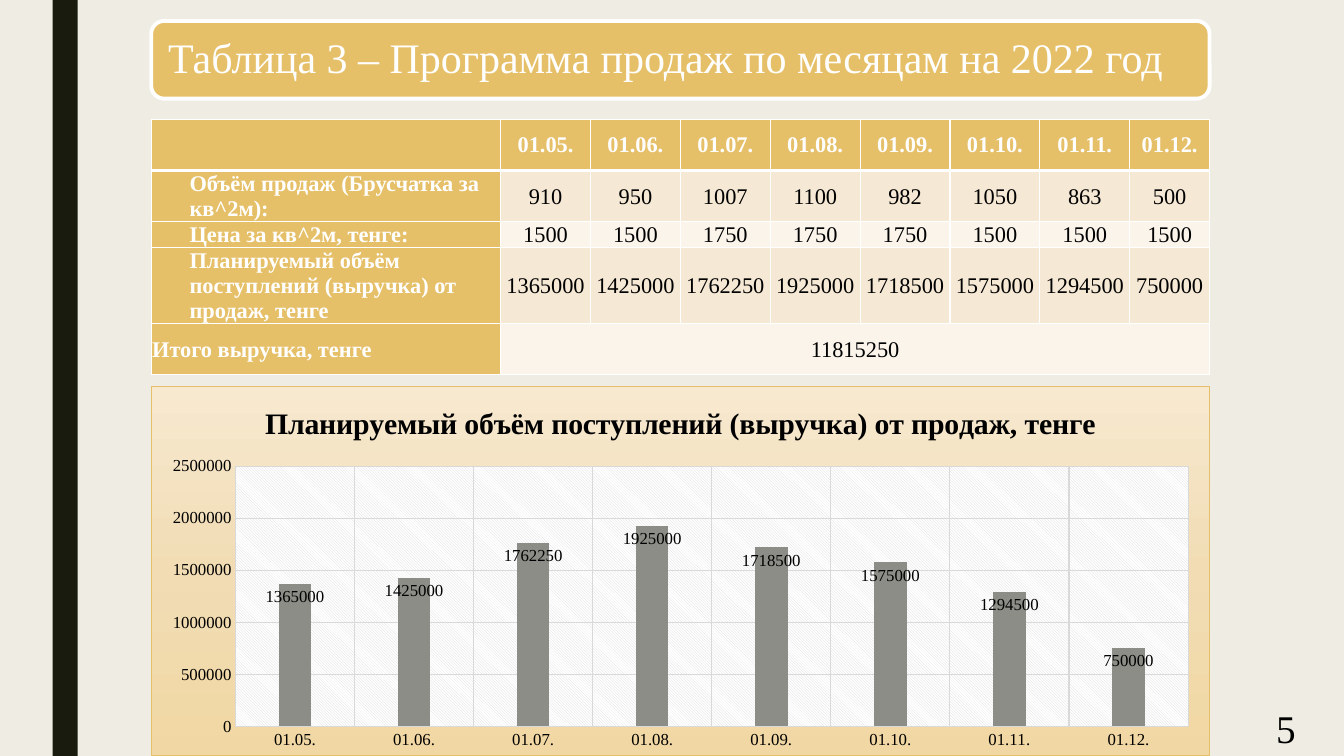
from pptx import Presentation
from pptx import util as u
from pptx.chart import data as chart_data
from pptx.dml import color
from pptx.enum import chart as charts, shapes, text
from pptx.oxml import ns, parse_xml

GOLD, WHITE, BLACK, GRID = "E6C069", "FFFFFF", "000000", "D9D9D9"
BANDS = ["F5E8D4", "FAF4EB"]
REVENUE = "Планируемый объём поступлений (выручка) от продаж, тенге"
MONTHS = [f"01.{month:02}." for month in range(5, 13)]
VOLUMES = [910, 950, 1007, 1100, 982, 1050, 863, 500]
PRICES = [1500, 1500, 1750, 1750, 1750, 1500, 1500, 1500]
INCOME = [volume * price for volume, price in zip(VOLUMES, PRICES)]


def rgb(value):
    return color.RGBColor.from_string(value)


def drawing(xml):
    """Build one XML element that uses the a: and c: prefixes."""
    head, mark, rest = xml.partition(">")
    return parse_xml(f"{head} {ns.nsdecls('a', 'c')}{mark}{rest}")


def solid(value):
    return f'<a:solidFill><a:srgbClr val="{value}"/></a:solidFill>'


class Slide:
    """A slide on a grid of 160 columns by 90 rows, with its style."""
    font = "Times New Roman"

    def __init__(self, deck, background):
        self.column = deck.slide_width / 160
        self.row = deck.slide_height / 90
        self.page = deck.slides.add_slide(deck.slide_layouts[6])
        self.page.background.fill.solid()
        self.page.background.fill.fore_color.rgb = rgb(background)

    def place(self, left, top, width, height):
        return [round(left * self.column), round(top * self.row),
                round(width * self.column), round(height * self.row)]

    def style(self, font, size, shade=BLACK, bold=False):
        font.name, font.size, font.bold = self.font, u.Pt(size), bold
        font.color.rgb = rgb(shade)

    def add_text(self, frame, words, size, shade=BLACK, bold=False, align=text.PP_ALIGN.LEFT):
        para = frame.paragraphs[0]
        para.alignment = align
        span = para.add_run()
        span.text = words
        self.style(span.font, size, shade, bold)
        return para

    def shape(self, kind, area, fill, line=None, weight=1):
        box = self.page.shapes.add_shape(kind, *self.place(*area))
        box.shadow.inherit = False
        box.fill.solid()
        box.fill.fore_color.rgb = rgb(fill)
        if line:
            box.line.color.rgb = rgb(line)
            box.line.width = u.Pt(weight)
        else:
            box.line.fill.background()
        return box

    def label(self, area, words, size, align):
        box = self.page.shapes.add_textbox(*self.place(*area))
        box.text_frame.word_wrap = True
        self.add_text(box.text_frame, words, size, align=align)

    def cell(self, cell, words, fill, head, indent, top, bottom, align):
        cell.fill.solid()
        cell.fill.fore_color.rgb = rgb(fill)
        cell.vertical_anchor = text.MSO_ANCHOR.MIDDLE
        cell.margin_left = u.Inches(indent)
        cell.margin_right = cell.margin_top = u.Inches(0.01)
        cell.margin_bottom = 0
        if words:
            self.add_text(cell.text_frame, words, 16, WHITE if head else BLACK, head, align)
        sides = {"L": 1, "R": 1, "T": top, "B": bottom}
        for index, (side, weight) in enumerate(sides.items()):
            border = drawing(f'<a:ln{side} w="{u.Pt(weight)}">{solid(WHITE)}</a:ln{side}>')
            cell._tc.get_or_add_tcPr().insert(index, border)

    def table(self, area, widths, heights, rows):
        frame = self.page.shapes.add_table(len(rows), len(widths), *self.place(*area))
        table = frame.table
        table.first_row = table.horz_banding = False
        for column, width in zip(table.columns, widths):
            column.width = round(width * self.column)
        for row, height in zip(table.rows, heights):
            row.height = round(height * self.row)
        last = len(rows) - 1
        for y, values in enumerate(rows):
            for x, words in enumerate(values):
                head = x == 0 or y == 0
                self.cell(table.cell(y, x), words,
                          fill=GOLD if head else BANDS[(y + 1) % 2],
                          head=head,
                          indent=0.38 if x == 0 and 0 < y < last else 0.01,
                          top=3 if y == 1 else 1,
                          bottom=3 if y == 0 else 1,
                          align=text.PP_ALIGN.CENTER if x else text.PP_ALIGN.LEFT)
        return table

    def axis(self, axis):
        axis.major_tick_mark = axis.minor_tick_mark = charts.XL_TICK_MARK.NONE
        axis.has_major_gridlines = True
        axis.major_gridlines.format.line.color.rgb = rgb(GRID)
        axis.major_gridlines.format.line.width = u.Pt(0.75)
        self.style(axis.tick_labels.font, 12)

    def columns(self, area, title, categories, values, fill):
        data = chart_data.CategoryChartData()
        data.categories = categories
        data.add_series(title, values)
        chart = self.page.shapes.add_chart(
            charts.XL_CHART_TYPE.COLUMN_CLUSTERED, *self.place(*area), data).chart
        self.style(chart.font, 10)
        chart.has_legend = False
        chart.has_title = True
        self.add_text(chart.chart_title.text_frame, title, 21.3, bold=True,
                      align=text.PP_ALIGN.CENTER)

        # Axes
        self.axis(chart.category_axis)
        self.axis(chart.value_axis)
        chart.category_axis.format.line.color.rgb = rgb(GRID)
        chart.category_axis.format.line.width = u.Pt(0.75)
        chart.value_axis.format.line.fill.background()

        # Columns and their values
        plot = chart.plots[0]
        plot.gap_width, plot.overlap, plot.vary_by_categories = 267, -43, False
        series = plot.series[0]
        series.format.fill.solid()
        series.format.fill.fore_color.rgb = rgb(fill)
        labels = series.data_labels
        labels.show_value = True
        labels.position = charts.XL_LABEL_POSITION.INSIDE_END
        self.style(labels.font, 12)
        return chart

    def chart_backdrop(self, chart, stops, line):
        steps = "".join(f'<a:gs pos="{share * 1000}"><a:srgbClr val="{shade}"/></a:gs>'
                        for share, shade in stops)
        body = chart.element.find(ns.qn("c:chart"))
        body.addnext(drawing(
            f'<c:spPr><a:gradFill><a:gsLst>{steps}</a:gsLst><a:lin ang="5400000"/>'
            f'</a:gradFill><a:ln w="{u.Pt(0.5)}">{solid(line)}</a:ln></c:spPr>'))
        body.find(ns.qn("c:plotArea")).append(drawing(
            f'<c:spPr><a:pattFill prst="ltDnDiag"><a:fgClr><a:srgbClr val="{GRID}"/></a:fgClr>'
            f'<a:bgClr><a:srgbClr val="{WHITE}"/></a:bgClr></a:pattFill>'
            '<a:ln><a:noFill/></a:ln></c:spPr>'))


def main():
    deck = Presentation()
    deck.slide_width, deck.slide_height = u.Inches(13.33), u.Inches(7.5)
    slide = Slide(deck, "EFEDE3")

    # Side bar
    slide.shape(shapes.MSO_SHAPE.RECTANGLE, (6.25, 0, 3, 90), "191B0E")

    # Title
    banner = slide.shape(shapes.MSO_SHAPE.ROUNDED_RECTANGLE, (18, 2.5, 126, 9.25),
                         GOLD, WHITE, 2.75)
    frame = banner.text_frame
    frame.word_wrap = True
    frame.vertical_anchor = text.MSO_ANCHOR.MIDDLE
    frame.margin_left = frame.margin_right = u.Inches(0.13)
    para = slide.add_text(frame, "Таблица 3 – Программа продаж по месяцам на 2022 год",
                          30, WHITE)
    para.line_spacing = 0.9

    # Sales table
    rows = [["", *MONTHS],
            ["Объём продаж (Брусчатка за кв^2м):", *map(str, VOLUMES)],
            ["Цена за кв^2м, тенге:", *map(str, PRICES)],
            [REVENUE, *map(str, INCOME)],
            ["Итого выручка, тенге", str(sum(INCOME)), *[""] * 7]]
    table = slide.table((18, 14.2, 126, 30.4), [41.6] + [10.7] * 7 + [9.5],
                        [6.1, 6.1, 3.1, 9, 6.1], rows)
    table.cell(4, 1).merge(table.cell(4, 8))

    # Revenue chart
    chart = slide.columns((18, 46, 126, 44), REVENUE, MONTHS, INCOME, "8C8D86")
    slide.chart_backdrop(chart, [(0, "F7E9D0"), (50, "F1DCB4"), (100, "F1D7A3")], GOLD)

    # Page number
    slide.label((146.2, 83.25, 13.8, 6.75), "5", 28, text.PP_ALIGN.CENTER)

    deck.save("out.pptx")


if __name__ == "__main__":
    main()
